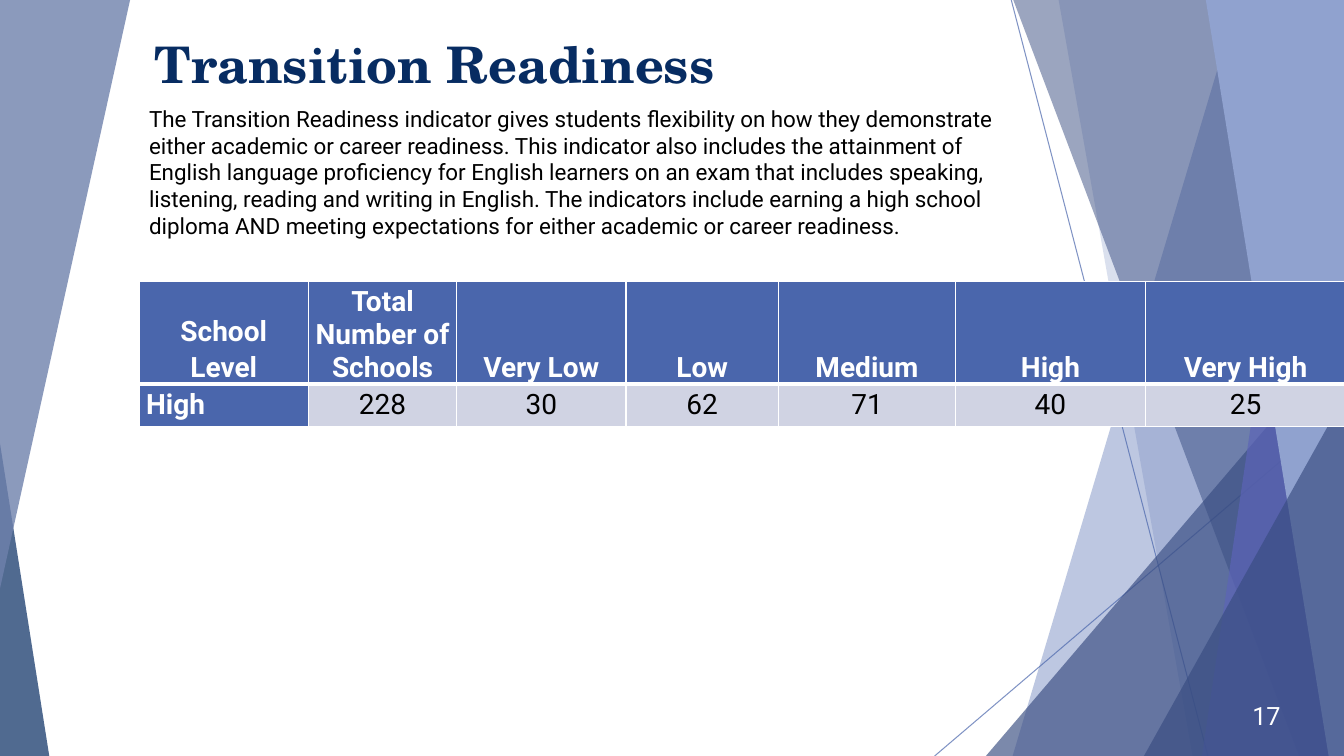
from lxml.etree import SubElement
from pptx import Presentation
from pptx.dml.color import RGBColor
from pptx.enum.shapes import MSO_CONNECTOR as Connector, MSO_SHAPE as Shape
from pptx.enum.text import MSO_ANCHOR as Anchor, PP_ALIGN as Align
from pptx.oxml.ns import qn
from pptx.util import Inches, Pt

WHITE = RGBColor(0xFF, 0xFF, 0xFF)
BLACK = RGBColor(0x00, 0x00, 0x00)
NAVY = RGBColor(0x07, 0x2C, 0x62)
BLUE = RGBColor(0x4A, 0x66, 0xAC)
DARK_BLUE = RGBColor(0x38, 0x4C, 0x81)
VIOLET = RGBColor(0x5C, 0x64, 0xB7)
LIGHT_BLUE = RGBColor(0x90, 0xA2, 0xCF)
SLATE = RGBColor(0x6F, 0x81, 0xAC)
PALE = RGBColor(0xD0, 0xD3, 0xE3)

WIDTH, HEIGHT, BLEED = 13.33, 7.5, 7.51
BODY_FONT = "Roboto"
TITLE_FONT = "TeX Gyre Schola"

INTRO = (
    "The Transition Readiness indicator gives students flexibility on how they demonstrate "
    "either academic or career readiness. This indicator also includes the attainment of "
    "English language proficiency for English learners on an exam that includes speaking, "
    "listening, reading and writing in English. The indicators include earning a high school "
    "diploma AND meeting expectations for either academic or career readiness."
)
HEADINGS = ["School Level", "Total Number of Schools", "Very Low", "Low", "Medium", "High", "Very High"]
HIGH_SCHOOLS = ["High", "228", "30", "62", "71", "40", "25"]
COLUMN_WIDTHS = [1.68, 1.47, 1.68, 1.51, 1.76, 1.88, 1.99]
ROW_HEIGHTS = [1.02, 0.42]


class SlideBuilder:
    def __init__(self, page, font):
        self.page = page
        self.font = font

    def set_alpha(self, properties, percent):
        color = next(properties.iter(qn("a:srgbClr")))
        SubElement(color, qn("a:alpha"), val=str(percent * 1000))

    def paint(self, shape, color, alpha):
        shape.shadow.inherit = False
        shape.fill.solid()
        shape.fill.fore_color.rgb = color
        shape.line.fill.background()
        if alpha < 100:
            self.set_alpha(shape.element.spPr, alpha)

    def line(self, start, end):
        x1, y1, x2, y2 = (Inches(value) for value in (*start, *end))
        line = self.page.shapes.add_connector(Connector.STRAIGHT, x1, y1, x2, y2)
        line.line.color.rgb = BLUE
        line.line.width = Pt(0.75)
        self.set_alpha(line.element.spPr, 70)
        SubElement(line.element.spPr, qn("a:effectLst"))

    def band(self, top_x, bottom_x, color, alpha):
        corners = [(WIDTH, 0), (WIDTH, BLEED), (bottom_x, BLEED)]
        outline = self.page.shapes.build_freeform(Inches(top_x), 0)
        outline.add_line_segments([(Inches(x), Inches(y)) for x, y in corners], close=True)
        self.paint(outline.convert_to_shape(), color, alpha)

    def triangle(self, place, apex, color, alpha, flipped=False):
        shape = self.page.shapes.add_shape(Shape.ISOSCELES_TRIANGLE, *map(Inches, place))
        shape.adjustments[0] = apex
        if flipped:
            shape.element.spPr.xfrm.set("flipV", "1")
        self.paint(shape, color, alpha)

    def add_span(self, para, text, size, color, bold=False, font=None, align=Align.LEFT):
        para.alignment = align
        span = para.add_run()
        span.text = text
        span.font.name = font or self.font
        span.font.size = Pt(size)
        span.font.bold = bold
        span.font.color.rgb = color

    def text(self, place, text, size, color, **style):
        box = self.page.shapes.add_textbox(*map(Inches, place))
        box.text_frame.word_wrap = True
        self.add_span(box.text_frame.paragraphs[0], text, size, color, **style)

    def border(self, cell, bottom):
        properties = cell._tc.get_or_add_tcPr()
        for index, side in enumerate(("lnL", "lnR", "lnT", "lnB")):
            width = bottom if side == "lnB" else 1
            edge = SubElement(properties, qn(f"a:{side}"), w=str(Pt(width)))
            fill = SubElement(edge, qn("a:solidFill"))
            SubElement(fill, qn("a:srgbClr"), val=str(WHITE))
            properties.remove(edge)
            properties.insert(index, edge)

    def table(self, left, top, rows, widths, heights):
        frame = self.page.shapes.add_table(
            len(rows), len(widths), Inches(left), Inches(top),
            Inches(sum(widths)), Inches(sum(heights)))
        table = frame.table
        for column, width in zip(table.columns, widths):
            column.width = Inches(width)
        for row, height in zip(table.rows, heights):
            row.height = Inches(height)
        for r, values in enumerate(rows):
            for c, value in enumerate(values):
                cell = table.cell(r, c)
                header = r == 0
                strong = header or c == 0
                cell.margin_left = cell.margin_right = Inches(0.07)
                cell.margin_top = cell.margin_bottom = 0
                cell.vertical_anchor = Anchor.BOTTOM if header else Anchor.MIDDLE
                cell.fill.solid()
                cell.fill.fore_color.rgb = BLUE if strong else PALE
                self.border(cell, 3 if header else 1)
                self.add_span(cell.text_frame.paragraphs[0], value, 20,
                              WHITE if strong else BLACK, bold=strong,
                              align=Align.CENTER if header or c else Align.LEFT)
        table.cell(0, 0).text_frame.paragraphs[0].line_spacing = 1.07


def main():
    deck = Presentation()
    deck.slide_width, deck.slide_height = Inches(WIDTH), Inches(HEIGHT)
    slide = SlideBuilder(deck.slides.add_slide(deck.slide_layouts[6]), BODY_FONT)

    slide.line((10.03, 0), (11.98, HEIGHT))
    slide.line((WIDTH, 4.04), (9.27, HEIGHT))
    slide.band(12.28, 10.04, BLUE, 36)
    slide.band(10.5, 11.83, BLUE, 20)
    slide.triangle((9.77, 3.34, 3.56, 4.17), 1, DARK_BLUE, 66)
    slide.band(10.05, 12.89, DARK_BLUE, 50)
    slide.band(13.03, 11.92, VIOLET, 70)
    slide.band(11.96, 13.18, LIGHT_BLUE, 100)
    slide.triangle((11.34, 3.94, 1.99, 3.57), 1, DARK_BLUE, 66)
    slide.triangle((0, 4.4, 0.49, 3.11), 0, NAVY, 70)
    slide.triangle((0, 0, 1.29, 5.84), 0, SLATE, 80, flipped=True)

    slide.text((12.05, 6.9, 0.75, 0.4), "17", 18, WHITE, align=Align.RIGHT)
    slide.text((1.38, 0.99, 8.69, 1.45), INTRO, 16, BLACK)
    slide.text((1.43, 0.28, 9.04, 1.44), "Transition Readiness", 36, NAVY, bold=True, font=TITLE_FONT)
    slide.table(1.38, 2.79, [HEADINGS, HIGH_SCHOOLS], COLUMN_WIDTHS, ROW_HEIGHTS)

    deck.save("out.pptx")


if __name__ == "__main__":
    main()
